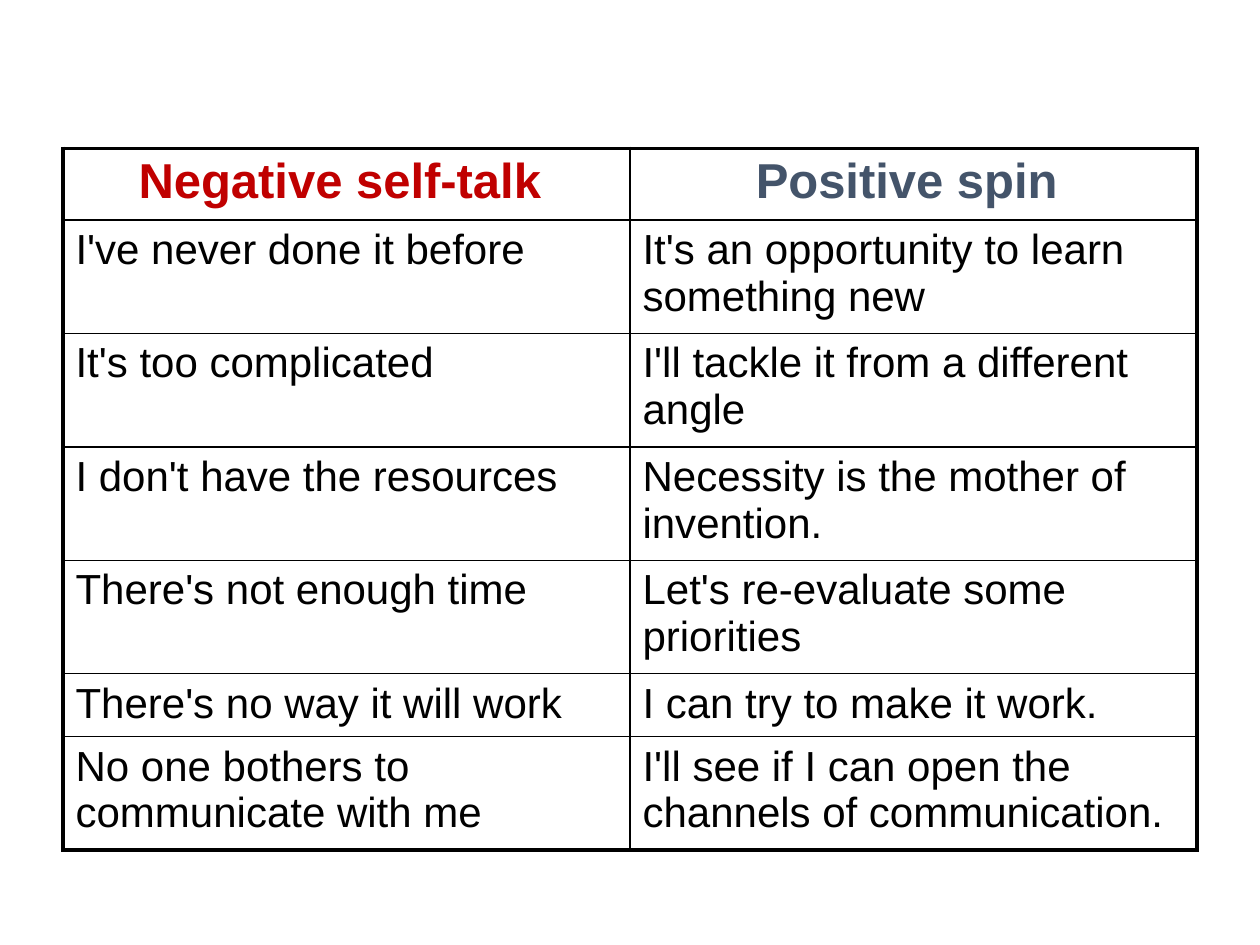
from dataclasses import dataclass

from lxml import etree
from pptx import Presentation
from pptx.dml.color import RGBColor
from pptx.enum import text
from pptx.oxml import ns
from pptx.table import _Cell
from pptx.util import Emu, Inches, Pt

BLACK = RGBColor(0x00, 0x00, 0x00)
RED = RGBColor(0xC0, 0x00, 0x00)
SLATE = RGBColor(0x44, 0x54, 0x6A)
OUTER, INNER = Pt(2.25), Pt(1)
HEADER, SINGLE, DOUBLE = Inches(0.57), Inches(0.5), Inches(0.9)
LEFT_SHARE, TOP_SHARE, WIDTH_SHARE = 0.05, 0.157, 0.9


@dataclass(frozen=True)
class Entry:
    words: str
    color: RGBColor = BLACK
    size: int = 24
    bold: bool = False
    align: text.PP_ALIGN = text.PP_ALIGN.LEFT


@dataclass(frozen=True)
class Row:
    height: Emu
    entries: tuple[Entry, ...]


def heading(words: str, color: RGBColor) -> Entry:
    return Entry(words, color, 28, True, text.PP_ALIGN.CENTER)


def pair(negative: str, positive: str, height: Emu = DOUBLE) -> Row:
    return Row(height, (Entry(negative), Entry(positive)))


ROWS = (
    Row(HEADER, (heading("Negative self-talk ", RED), heading("Positive spin ", SLATE))),
    pair("I've never done it before", "It's an opportunity to learn something new"),
    pair("It's too complicated", "I'll tackle it from a different angle"),
    pair("I don't have the resources", "Necessity is the mother of invention."),
    pair("There's not enough time", "Let's re-evaluate some priorities"),
    pair("There's no way it will work", "I can try to make it work.", SINGLE),
    pair("No one bothers to communicate with me",
         "I'll see if I can open the channels of communication."),
)
COLUMN_COUNT = len(ROWS[0].entries)


def draw_borders(cell: _Cell, row: int, column: int) -> None:
    properties = cell._tc.get_or_add_tcPr()
    on_edge = {
        "lnL": column == 0,
        "lnR": column == COLUMN_COUNT - 1,
        "lnT": row == 0,
        "lnB": row == len(ROWS) - 1,
    }
    for side, outer in on_edge.items():
        line = etree.SubElement(properties, ns.qn(f"a:{side}"), w=str(OUTER if outer else INNER))
        fill = etree.SubElement(line, ns.qn("a:solidFill"))
        etree.SubElement(fill, ns.qn("a:srgbClr"), val=str(BLACK))


def write_entry(cell: _Cell, entry: Entry) -> None:
    cell.fill.background()
    para = cell.text_frame.paragraphs[0]
    para.alignment = entry.align
    span = para.add_run()
    span.text = entry.words
    span.font.color.rgb = entry.color
    settings = {"name": "Arial", "size": Pt(entry.size), "bold": entry.bold}
    for name, value in settings.items():
        setattr(span.font, name, value)


def main() -> None:
    deck = Presentation()
    deck.slide_width, deck.slide_height = Inches(10), Inches(7.5)
    page = deck.slides.add_slide(deck.slide_layouts[6])
    table = page.shapes.add_table(
        len(ROWS), COLUMN_COUNT,
        int(deck.slide_width * LEFT_SHARE), int(deck.slide_height * TOP_SHARE),
        int(deck.slide_width * WIDTH_SHARE), sum(row.height for row in ROWS),
    ).table
    for name in ("first_row", "horz_banding"):
        setattr(table, name, False)
    for row_index, row in enumerate(ROWS):
        table.rows[row_index].height = row.height
        for column_index, entry in enumerate(row.entries):
            cell = table.cell(row_index, column_index)
            draw_borders(cell, row_index, column_index)
            write_entry(cell, entry)
    deck.save("out.pptx")


if __name__ == "__main__":
    main()
